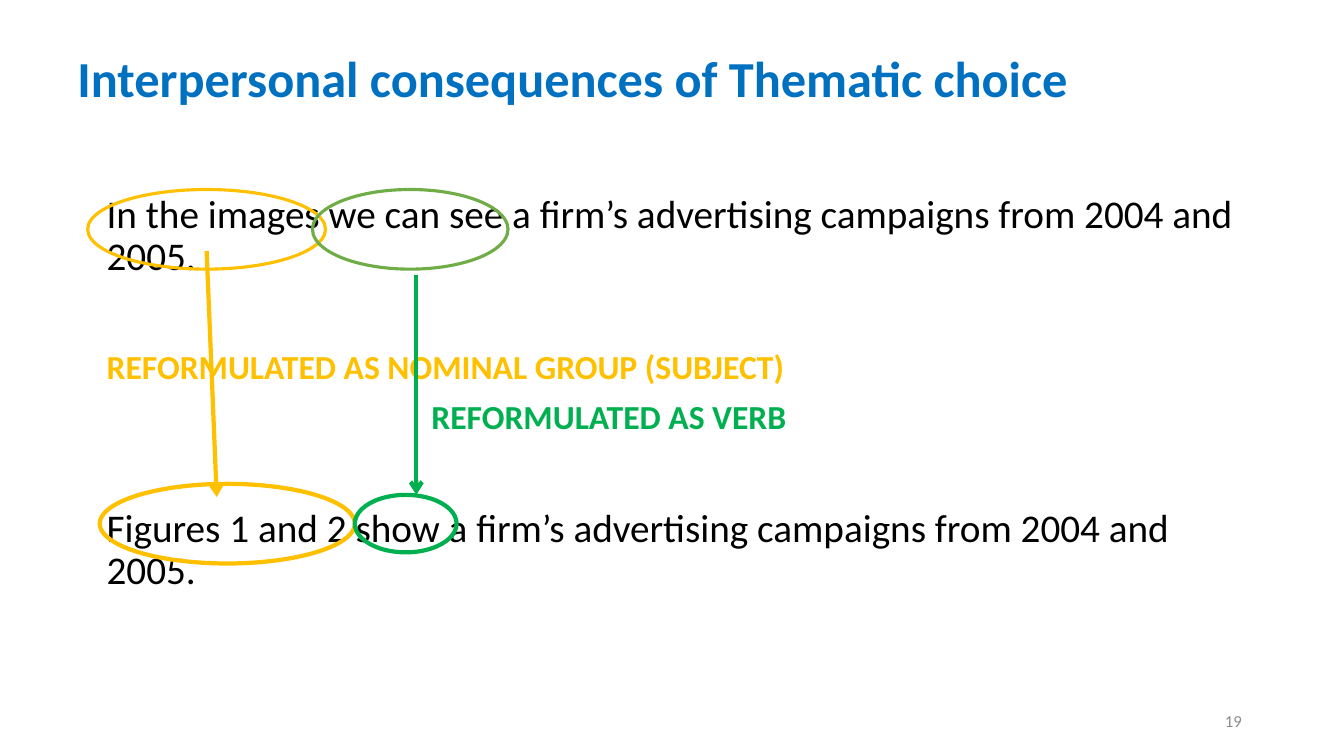
from dataclasses import dataclass

from lxml.etree import SubElement
from pptx import Presentation
from pptx.dml.color import RGBColor as Rgb
from pptx.enum.shapes import MSO_CONNECTOR as Link, MSO_SHAPE as Form
from pptx.enum.text import MSO_ANCHOR as Anchor, PP_ALIGN as Align
from pptx.oxml.ns import qn
from pptx.slide import Slide
from pptx.util import Pt


@dataclass(frozen=True)
class Theme:
    font: str = "Calibri"
    blue: str = "0070C0"
    black: str = "000000"
    gold: str = "FFC000"
    green: str = "00B050"
    leaf: str = "70AD47"
    gray: str = "8C8C8C"
    title: float = 36
    body: float = 28
    note: float = 24
    small: float = 12
    thin: float = 2.25
    thick: float = 3


@dataclass(frozen=True)
class Para:
    text: str
    size: float
    color: str
    bold: bool = False
    before: float = 0
    indent: float = 0
    lines: float = 0.9
    align: Align = Align.LEFT


@dataclass(frozen=True)
class Block:
    left: float
    top: float
    width: float
    height: float
    anchor: Anchor
    paras: tuple[Para, ...]


@dataclass(frozen=True)
class Ring:
    left: float
    top: float
    width: float
    height: float
    color: str
    weight: float


@dataclass(frozen=True)
class Arrow:
    x1: float
    y1: float
    x2: float
    y2: float
    color: str


LOOK = Theme()
GAP = 10
WIDE = 51
HIGH = 135.36
TALL = 56.88

BLOCKS = (
    Block(48.24, 21.6, 864, 72.72, Anchor.MIDDLE, (
        Para("Interpersonal consequences of Thematic choice",
             LOOK.title, LOOK.blue, True),
    )),
    Block(69.12, HIGH, 828, 342.72, Anchor.TOP, (
        Para("In the images we can see a firm’s advertising campaigns from 2004 and 2005.",
             LOOK.body, LOOK.black, before=GAP),
        Para("REFORMULATED AS NOMINAL GROUP (SUBJECT)",
             LOOK.note, LOOK.gold, True, WIDE),
        Para("REFORMULATED AS VERB",
             LOOK.note, LOOK.green, True, GAP, 232),
        Para("Figures 1 and 2 show a firm’s advertising campaigns from 2004 and 2005.",
             LOOK.body, LOOK.black, before=WIDE),
    )),
    Block(678.24, 500.4, 216, 28.8, Anchor.MIDDLE, (
        Para("19", LOOK.small, LOOK.gray, lines=1.0, align=Align.RIGHT),
    )),
)

RINGS = (
    Ring(62.64, HIGH, 169.92, TALL, LOOK.gold, LOOK.thin),
    Ring(71.28, 345.6, 182.16, TALL, LOOK.gold, LOOK.thick),
    Ring(223.2, HIGH, 139.68, TALL, LOOK.leaf, LOOK.thin),
    Ring(253.44, 353.52, 72.72, 41.04, LOOK.green, LOOK.thick),
)

ARROWS = (
    Arrow(147.6, 179.28, 154.8, 354.96, LOOK.gold),
    Arrow(297.36, 196.56, 297.36, 353.52, LOOK.green),
)


def add_block(slide: Slide, block: Block) -> None:
    box = slide.shapes.add_textbox(
        Pt(block.left), Pt(block.top), Pt(block.width), Pt(block.height))
    frame = box.text_frame
    frame.word_wrap = True
    frame.vertical_anchor = block.anchor
    frame.text = "\n".join(para.text for para in block.paras)
    for line, para in zip(frame.paragraphs, block.paras):
        line.alignment = para.align
        line.line_spacing = para.lines
        line.space_before = Pt(para.before)
        if para.indent:
            line._p.get_or_add_pPr().set("marL", str(Pt(para.indent)))
        for run in line.runs:
            run.font.name = LOOK.font
            run.font.size = Pt(para.size)
            run.font.bold = para.bold
            run.font.color.rgb = Rgb.from_string(para.color)


def add_ring(slide: Slide, ring: Ring) -> None:
    oval = slide.shapes.add_shape(
        Form.OVAL, Pt(ring.left), Pt(ring.top), Pt(ring.width), Pt(ring.height))
    oval.shadow.inherit = False
    oval.fill.background()
    oval.line.color.rgb = Rgb.from_string(ring.color)
    oval.line.width = Pt(ring.weight)


def add_arrow(slide: Slide, arrow: Arrow) -> None:
    link = slide.shapes.add_connector(
        Link.STRAIGHT, Pt(arrow.x1), Pt(arrow.y1), Pt(arrow.x2), Pt(arrow.y2))
    link.line.color.rgb = Rgb.from_string(arrow.color)
    link.line.width = Pt(LOOK.thick)
    SubElement(link.line._get_or_add_ln(), qn("a:tailEnd"), type="arrow")
    SubElement(link._element.spPr, qn("a:effectLst"))


def main() -> None:
    deck = Presentation()
    deck.slide_width, deck.slide_height = Pt(960), Pt(540)
    slide = deck.slides.add_slide(deck.slide_layouts[6])
    for block in BLOCKS:
        add_block(slide, block)
    for ring in RINGS:
        add_ring(slide, ring)
    for arrow in ARROWS:
        add_arrow(slide, arrow)
    deck.save("out.pptx")


if __name__ == "__main__":
    main()
